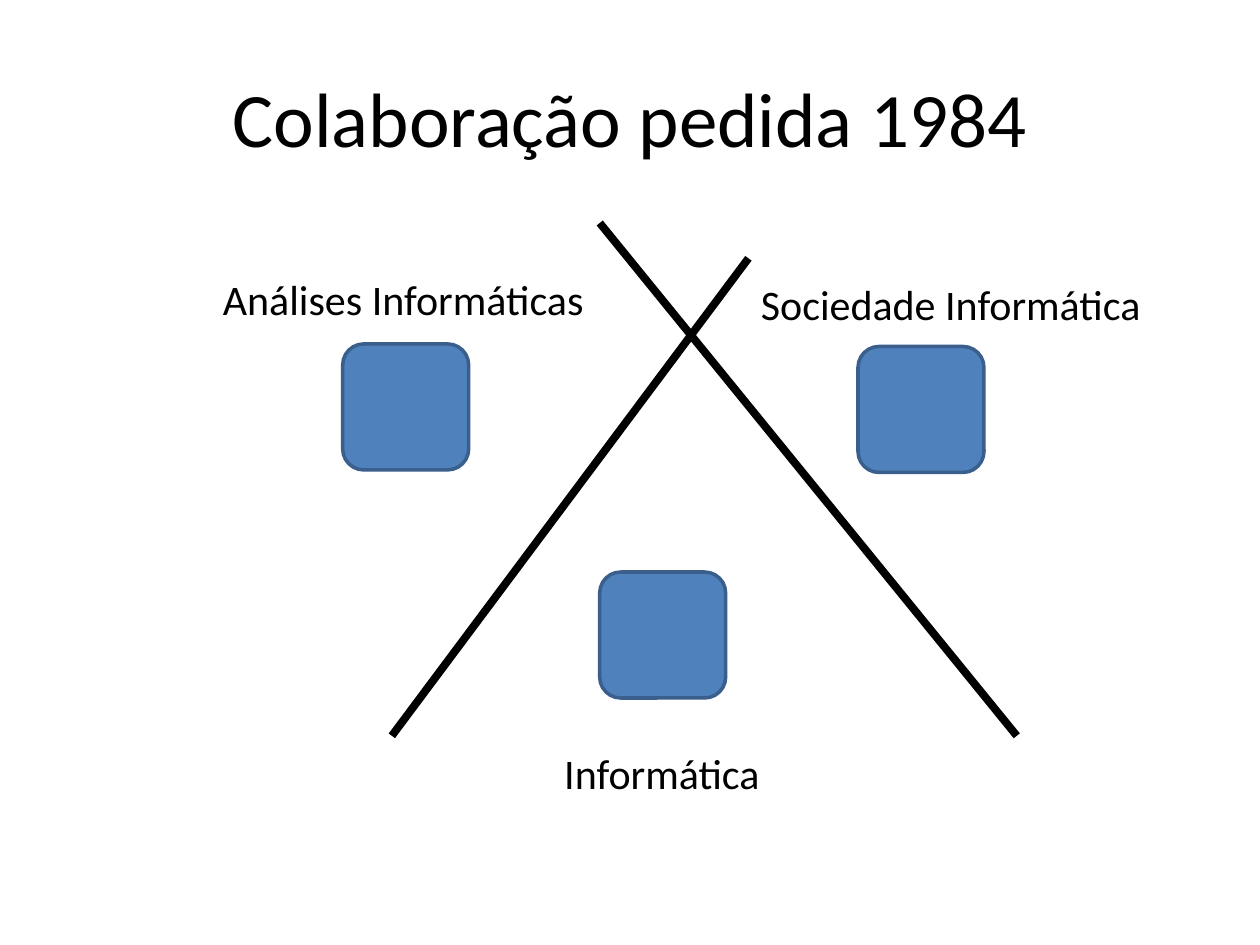
import pptx
import pptx.dml.color
import pptx.enum.shapes
import pptx.enum.text
import pptx.oxml.ns
import pptx.util
from lxml import etree

Pt = pptx.util.Pt
BLACK = pptx.dml.color.RGBColor(0x00, 0x00, 0x00)
BLUE = pptx.dml.color.RGBColor(0x4F, 0x81, 0xBD)
DARK_BLUE = pptx.dml.color.RGBColor(0x3A, 0x5F, 0x8C)
FONT = "Calibri"
SQUARE_SIDE = 72
LABEL_HEIGHT = 36

PARTIES = [
    ("Análises Informáticas", (195.84, 196.56), (120.24, 152.64, 222.48)),
    ("Informática", (342.72, 326.88), (315.36, 423.36, 127.44)),
    ("Sociedade Informática", (490.32, 198), (427.68, 155.52, 234)),
]
DIVIDERS = [
    ((427.68, 147.6), (223.92, 420.48)),
    ((581.04, 420.48), (342.72, 127.44)),
]


def style_paragraph(para, size, alignment):
    para.alignment = alignment
    para.font.name = FONT
    para.font.size = Pt(size)
    para.font.color.rgb = BLACK


def place_title(page, left, top, width, height, text):
    title = page.shapes.title
    title.left, title.top, title.width, title.height = map(Pt, (left, top, width, height))
    title.text_frame.text = text
    title.text_frame.vertical_anchor = pptx.enum.text.MSO_ANCHOR.MIDDLE
    style_paragraph(title.text_frame.paragraphs[0], 44, pptx.enum.text.PP_ALIGN.CENTER)


def place_square(page, left, top):
    square = page.shapes.add_shape(
        pptx.enum.shapes.MSO_SHAPE.ROUNDED_RECTANGLE,
        Pt(left), Pt(top), Pt(SQUARE_SIDE), Pt(SQUARE_SIDE))
    square.shadow.inherit = False
    square.fill.solid()
    square.fill.fore_color.rgb = BLUE
    square.line.color.rgb = DARK_BLUE
    square.line.width = Pt(2)


def place_label(page, left, top, width, text):
    label = page.shapes.add_textbox(Pt(left), Pt(top), Pt(width), Pt(LABEL_HEIGHT))
    frame = label.text_frame
    frame.text = text
    frame.word_wrap = False
    frame.auto_size = pptx.enum.text.MSO_AUTO_SIZE.SHAPE_TO_FIT_TEXT
    style_paragraph(frame.paragraphs[0], 24, pptx.enum.text.PP_ALIGN.LEFT)


def place_divider(page, start, end):
    divider = page.shapes.add_connector(
        pptx.enum.shapes.MSO_CONNECTOR.STRAIGHT, *map(Pt, start + end))
    divider.line.color.rgb = BLACK
    divider.line.width = Pt(4.5)
    etree.SubElement(divider._element.spPr, pptx.oxml.ns.qn("a:effectLst"))


def main():
    deck = pptx.Presentation()
    deck.slide_width, deck.slide_height = Pt(720), Pt(540)
    page = deck.slides.add_slide(deck.slide_layouts[5])
    place_title(page, 36, 21.6, 648, 90, "Colaboração pedida 1984")
    for name, square_box, label_box in PARTIES:
        place_square(page, *square_box)
        place_label(page, *label_box, name)
    for start, end in DIVIDERS:
        place_divider(page, start, end)
    deck.save("out.pptx")


if __name__ == "__main__":
    main()
